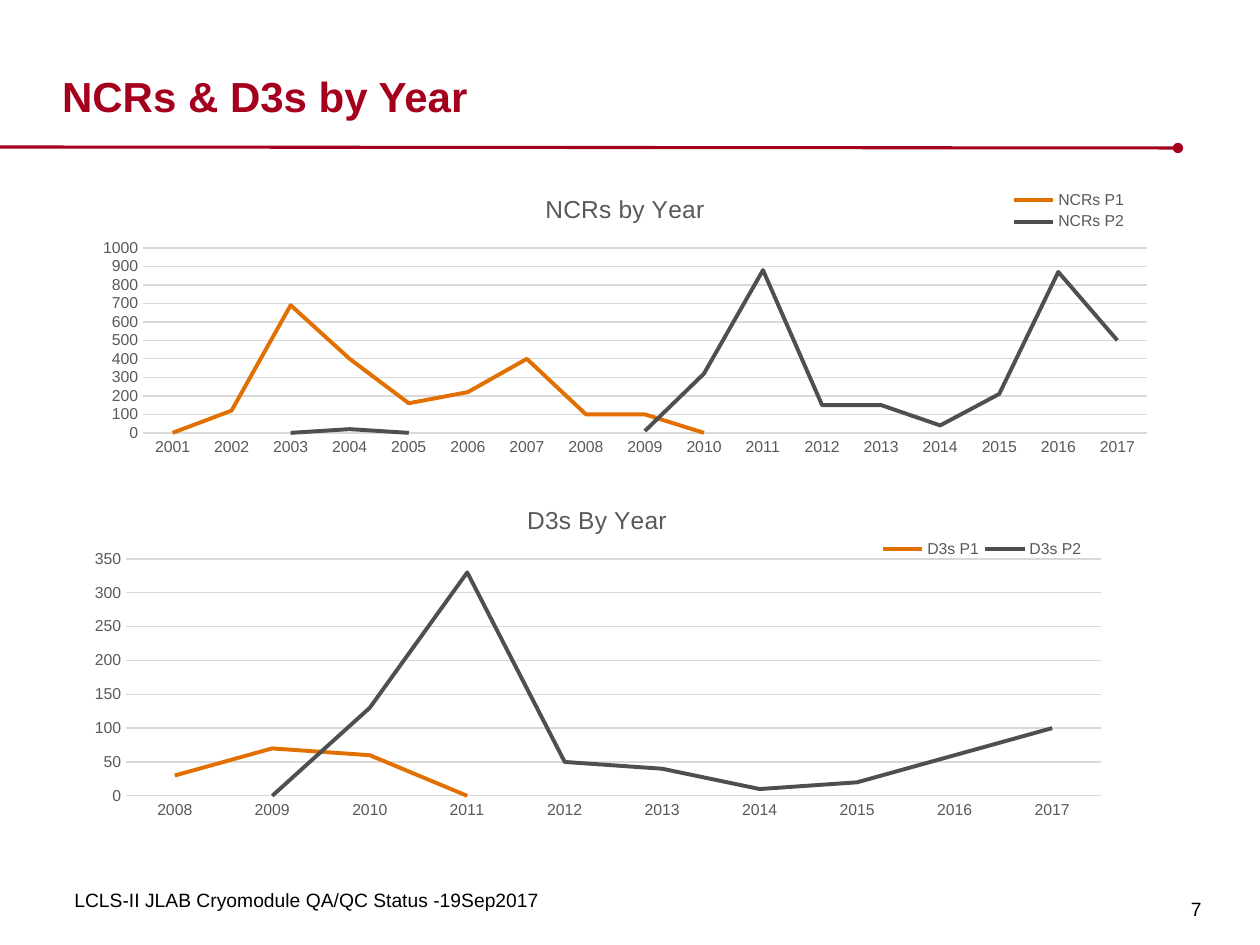
from dataclasses import dataclass
from typing import Optional

from lxml.etree import SubElement
from pptx import Presentation
from pptx.chart.data import CategoryChartData
from pptx.dml.color import RGBColor
from pptx.enum.chart import XL_CHART_TYPE, XL_LEGEND_POSITION, XL_TICK_MARK
from pptx.enum.shapes import MSO_CONNECTOR
from pptx.enum.text import MSO_ANCHOR, PP_ALIGN
from pptx.oxml import parse_xml
from pptx.oxml.ns import nsdecls, qn
from pptx.util import Emu, Pt


@dataclass(frozen=True)
class Theme:
    font: str = "Arial"
    red: str = "A4001D"
    black: str = "000000"
    grey: str = "595959"
    grid: str = "D9D9D9"
    series: tuple[str, ...] = ("E17000", "4D4F53")
    title: int = 24
    chart_title: int = 14
    body: int = 11
    chart: int = 10
    label: int = 9


@dataclass(frozen=True)
class Box:
    left: int
    top: int
    width: int
    height: int

    def emu(self) -> tuple[Emu, ...]:
        return tuple(px(n) for n in (self.left, self.top, self.width, self.height))


@dataclass(frozen=True)
class YearChart:
    title: str
    box: Box
    plot: Box
    legend: Box
    first_year: int
    top_value: int
    step: int
    series: dict[str, list[Optional[int]]]


THEME = Theme()
PX_PER_INCH = 126
GAP = None

CHARTS = [
    YearChart(
        "NCRs by Year", Box(82, 176, 1086, 323), Box(143, 248, 1004, 185),
        Box(994, 188, 150, 46), 2001, 1000, 100,
        {
            "NCRs P1": [0, 120, 690, 400, 160, 220, 400, 100, 100, 0] + [GAP] * 7,
            "NCRs P2": [GAP, GAP, 0, 20, 0, GAP, GAP, GAP, 10, 320, 880, 150, 150,
                        40, 210, 870, 500],
        },
    ),
    YearChart(
        "D3s By Year", Box(73, 486, 1048, 378), Box(126, 559, 975, 237),
        Box(877, 537, 210, 24), 2008, 350, 50,
        {
            "D3s P1": [30, 70, 60, 0] + [GAP] * 6,
            "D3s P2": [GAP, 0, 130, 330, 50, 40, 10, 20, 60, 100],
        },
    ),
]


def px(count: int) -> Emu:
    return Emu(round(count * 914400 / PX_PER_INCH))


def style_font(font, size: int, color: str, bold: bool = False) -> None:
    font.name = THEME.font
    font.size = Pt(size)
    font.bold = bold
    font.color.rgb = RGBColor.from_string(color)


def style_line(line, color: str, width: float) -> None:
    line.color.rgb = RGBColor.from_string(color)
    line.width = Pt(width)


def write_text(frame, text: str, *, size: int, color: str, bold: bool = False,
               anchor=MSO_ANCHOR.TOP, insets: Optional[tuple[int, ...]] = None) -> None:
    frame.word_wrap = True
    frame.vertical_anchor = anchor
    if insets:
        (frame.margin_left, frame.margin_top,
         frame.margin_right, frame.margin_bottom) = (px(n) for n in insets)
    para = frame.paragraphs[0]
    para.alignment = PP_ALIGN.LEFT
    span = para.add_run()
    span.text = text
    style_font(span.font, size, color, bold)


def add_rule(page) -> None:
    rule = page.shapes.add_connector(
        MSO_CONNECTOR.STRAIGHT, px(0), px(147), px(1178), px(148))
    style_line(rule.line, THEME.red, 1.75)
    SubElement(rule.line._get_or_add_ln(), qn("a:tailEnd"), type="oval")
    SubElement(rule.element.spPr, qn("a:effectLst"))


def manual_layout(inner: Box, outer: Box, target: str = ""):
    fractions = {
        "x": (inner.left - outer.left) / outer.width,
        "y": (inner.top - outer.top) / outer.height,
        "w": inner.width / outer.width,
        "h": inner.height / outer.height,
    }
    sizes = "".join(f'<c:{key} val="{value:.4f}"/>' for key, value in fractions.items())
    return parse_xml(
        f'<c:layout {nsdecls("c")}><c:manualLayout>{target}<c:xMode val="edge"/>'
        f'<c:yMode val="edge"/>{sizes}</c:manualLayout></c:layout>')


def place_parts(chart, spec: YearChart) -> None:
    for old in chart.element.xpath(".//c:plotArea/c:layout | .//c:legend/c:layout"):
        old.getparent().remove(old)
    plot = chart.element.xpath(".//c:plotArea")[0]
    plot.insert(0, manual_layout(spec.plot, spec.box, '<c:layoutTarget val="inner"/>'))
    position = chart.element.xpath(".//c:legend/c:legendPos")[0]
    position.addnext(manual_layout(spec.legend, spec.box))


def style_axes(chart, spec: YearChart) -> None:
    years, values = chart.category_axis, chart.value_axis
    for axis in (years, values):
        axis.major_tick_mark = XL_TICK_MARK.NONE
        axis.minor_tick_mark = XL_TICK_MARK.NONE
        style_font(axis.tick_labels.font, THEME.label, THEME.grey)
    style_line(years.format.line, THEME.grid, 0.75)
    values.format.line.fill.background()
    values.minimum_scale, values.maximum_scale = 0, spec.top_value
    values.major_unit = spec.step
    style_line(values.major_gridlines.format.line, THEME.grid, 0.75)


def add_year_chart(page, spec: YearChart) -> None:
    data = CategoryChartData(number_format="General")
    count = len(next(iter(spec.series.values())))
    data.categories = [str(spec.first_year + n) for n in range(count)]
    for name, values in spec.series.items():
        data.add_series(name, values)
    chart = page.shapes.add_chart(XL_CHART_TYPE.LINE, *spec.box.emu(), data).chart
    style_font(chart.font, THEME.chart, THEME.black)

    chart.has_title = True
    chart.chart_title.include_in_layout = False
    heading = chart.chart_title.text_frame
    heading.text = spec.title
    style_font(heading.paragraphs[0].runs[0].font, THEME.chart_title, THEME.grey)

    chart.has_legend = True
    chart.legend.position = XL_LEGEND_POSITION.BOTTOM
    chart.legend.include_in_layout = False
    style_font(chart.legend.font, THEME.label, THEME.grey)

    style_axes(chart, spec)
    chart.plots[0].vary_by_categories = False
    for series, color in zip(chart.plots[0].series, THEME.series):
        series.smooth = False
        style_line(series.format.line, color, 2.25)
    place_parts(chart, spec)


def add_text(page, box: Box, text: str, **style) -> None:
    frame = page.shapes.add_textbox(*box.emu()).text_frame
    write_text(frame, text, size=THEME.body, color=THEME.black, **style)


def main() -> None:
    deck = Presentation()
    deck.slide_width, deck.slide_height = px(1260), px(945)
    page = deck.slides.add_slide(deck.slide_layouts[5])
    title = page.shapes.title
    title.left, title.top, title.width, title.height = Box(62, 18, 1116, 103).emu()
    write_text(title.text_frame, "NCRs & D3s by Year", size=THEME.title, color=THEME.red,
               bold=True, anchor=MSO_ANCHOR.BOTTOM, insets=(0, 0, 0, 0))
    add_rule(page)
    for spec in CHARTS:
        add_year_chart(page, spec)
    add_text(page, Box(62, 882, 568, 43), "LCLS-II JLAB Cryomodule QA/QC Status -19Sep2017")
    add_text(page, Box(1181, 871, 44, 74), "7", anchor=MSO_ANCHOR.MIDDLE,
             insets=(10, 8, 10, 6))
    deck.save("out.pptx")


if __name__ == "__main__":
    main()
